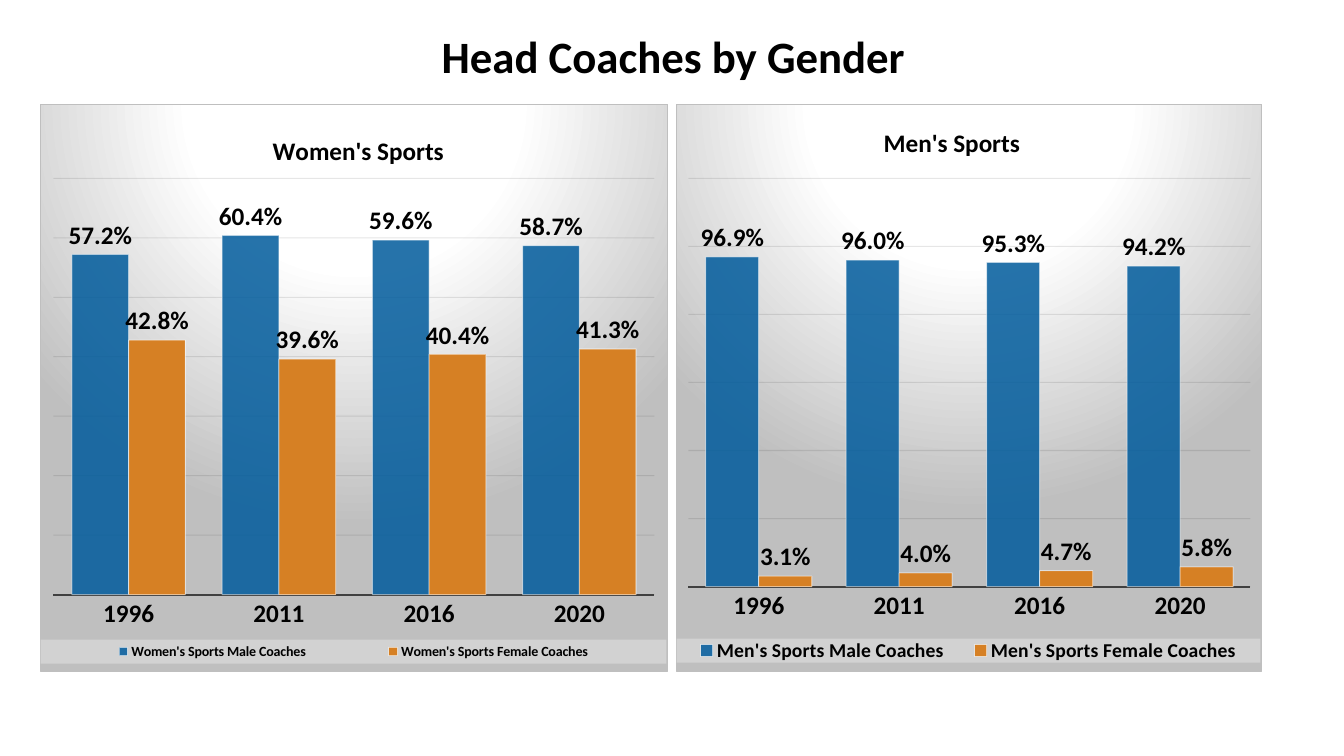
from pptx import Presentation
from pptx.chart.data import CategoryChartData
from pptx.dml.color import RGBColor
from pptx.enum.chart import XL_CHART_TYPE, XL_LABEL_POSITION, XL_LEGEND_POSITION, XL_TICK_MARK
from pptx.enum.text import MSO_ANCHOR, MSO_AUTO_SIZE, PP_ALIGN
from pptx.oxml import parse_xml
from pptx.oxml.ns import nsdecls, qn
from pptx.util import Emu, Pt

TITLE = "Head Coaches by Gender"
TITLE_AREA = (278, 24, 791, 65)
YEARS = ["1996", "2011", "2016", "2020"]
SERIES_STYLES = [("005B9C", 85), ("D68024", 100)]
CHARTS = [
    {
        "title": "Women's Sports",
        "area": (40, 104, 628, 568),
        "title_at": (268, 128),
        "plot": (53, 178, 602, 417),
        "legend": (40, 640, 627, 24),
        "legend_size": 10,
        "top": 0.7,
        "step": 0.1,
        "series": [
            ("Women's Sports Male Coaches", (0.572, 0.604, 0.596, 0.587)),
            ("Women's Sports Female Coaches", (0.428, 0.396, 0.404, 0.413)),
        ],
    },
    {
        "title": "Men's Sports",
        "area": (676, 104, 586, 568),
        "title_at": (879, 120),
        "plot": (688, 178, 563, 409),
        "legend": (676, 639, 585, 24),
        "legend_size": 14,
        "top": 1.2,
        "step": 0.2,
        "series": [
            ("Men's Sports Male Coaches", (0.969, 0.96, 0.953, 0.942)),
            ("Men's Sports Female Coaches", (0.031, 0.04, 0.047, 0.058)),
        ],
    },
]
BACKDROP = f"""<c:spPr {nsdecls('c', 'a')}>
<a:gradFill><a:gsLst>
<a:gs pos="0"><a:srgbClr val="FFFFFF"/></a:gs>
<a:gs pos="39000"><a:srgbClr val="FFFFFF"/></a:gs>
<a:gs pos="100000"><a:srgbClr val="BFBFBF"/></a:gs>
</a:gsLst><a:path path="circle">
<a:fillToRect l="50000" t="-80000" r="50000" b="180000"/></a:path></a:gradFill>
<a:ln w="9525"><a:solidFill><a:srgbClr val="BFBFBF"/></a:solidFill></a:ln></c:spPr>"""
LEGEND_FILL = f"""<c:spPr {nsdecls('c', 'a')}><a:solidFill>
<a:srgbClr val="F2F2F2"><a:alpha val="39000"/></a:srgbClr></a:solidFill></c:spPr>"""


def px(length):
    return Emu(round(length * 914400 / 100.8))


def color(value):
    return RGBColor.from_string(value)


def style_font(font, size, bold=True):
    font.name = "Calibri"
    font.size = Pt(size)
    font.bold = bold
    font.color.rgb = color("000000")


def style_line(line, value, width):
    line.color.rgb = color(value)
    line.width = Pt(width)


def fade(owner, *opacities):
    shades = owner.find(qn("c:spPr")).iter(qn("a:srgbClr"))
    for shade, opacity in zip(list(shades), opacities):
        shade.append(parse_xml(f'<a:alpha {nsdecls("a")} val="{opacity * 1000}"/>'))


def place(owner, position, area, place_at, inner=False):
    left, top, width, height = area
    values = [("x", (position[0] - left) / width), ("y", (position[1] - top) / height)]
    if len(position) == 4:
        values += [("w", position[2] / width), ("h", position[3] / height)]
    target = '<c:layoutTarget val="inner"/>' if inner else ""
    modes = "".join(f'<c:{name}Mode val="edge"/>' for name in "xy")
    sizes = "".join(f'<c:{name} val="{value:.4f}"/>' for name, value in values)
    for old in owner.findall(qn("c:layout")):
        owner.remove(old)
    owner.insert(place_at, parse_xml(
        f'<c:layout {nsdecls("c")}><c:manualLayout>{target}{modes}{sizes}'
        "</c:manualLayout></c:layout>"))


def add_coach_chart(page, info):
    data = CategoryChartData(number_format="0.0%")
    data.categories = YEARS
    for name, values in info["series"]:
        data.add_series(name, values)
    area = info["area"]
    chart = page.shapes.add_chart(
        XL_CHART_TYPE.COLUMN_CLUSTERED, *map(px, area), data).chart
    style_font(chart.font, 10, False)

    root = chart.element.find(qn("c:chart"))
    root.addnext(parse_xml(BACKDROP))
    place(root.find(qn("c:plotArea")), info["plot"], area, 0, True)

    chart.has_title = True
    span = chart.chart_title.text_frame.paragraphs[0].add_run()
    span.text = info["title"]
    style_font(span.font, 18)
    place(root.find(qn("c:title")), info["title_at"], area, 1)

    chart.has_legend = True
    chart.legend.position = XL_LEGEND_POSITION.BOTTOM
    chart.legend.include_in_layout = False
    style_font(chart.legend.font, info["legend_size"])
    legend = root.find(qn("c:legend"))
    place(legend, info["legend"], area, 1)
    legend.find(qn("c:overlay")).addnext(parse_xml(LEGEND_FILL))

    years = chart.category_axis
    years.major_tick_mark = XL_TICK_MARK.NONE
    style_font(years.tick_labels.font, 18)
    style_line(years.format.line, "404040", 1.5)

    shares = chart.value_axis
    shares.minimum_scale = 0
    shares.maximum_scale = info["top"]
    shares.major_unit = info["step"]
    shares.tick_labels.number_format = "0.0%"
    shares.tick_labels.number_format_is_linked = False
    shares.has_major_gridlines = True
    style_line(shares.major_gridlines.format.line, "0D0D0D", 0.75)
    fade(root.find(f".//{qn('c:majorGridlines')}"), 10)
    shares.visible = False

    plot = chart.plots[0]
    plot.gap_width = 65
    plot.overlap = 0
    plot.vary_by_categories = False
    nodes = root.iter(qn("c:ser"))
    for series, node, (fill, opacity) in zip(plot.series, nodes, SERIES_STYLES):
        series.format.fill.solid()
        series.format.fill.fore_color.rgb = color(fill)
        style_line(series.format.line, "FFFFFF", 0.75)
        fade(node, opacity, 50)
        labels = series.data_labels
        labels.show_value = True
        labels.position = XL_LABEL_POSITION.OUTSIDE_END
        labels.number_format = "0.0%"
        labels.number_format_is_linked = False
        style_font(labels.font, 18)


def main():
    deck = Presentation()
    deck.slide_width, deck.slide_height = px(1344), px(756)
    page = deck.slides.add_slide(deck.slide_layouts[5])

    for info in CHARTS:
        add_coach_chart(page, info)

    box = page.shapes.title
    box.left, box.top, box.width, box.height = map(px, TITLE_AREA)
    box.text_frame.word_wrap = True
    box.text_frame.auto_size = MSO_AUTO_SIZE.SHAPE_TO_FIT_TEXT
    box.text_frame.vertical_anchor = MSO_ANCHOR.TOP
    para = box.text_frame.paragraphs[0]
    para.alignment = PP_ALIGN.CENTER
    span = para.add_run()
    span.text = TITLE
    style_font(span.font, 32)

    deck.save("out.pptx")


if __name__ == "__main__":
    main()
